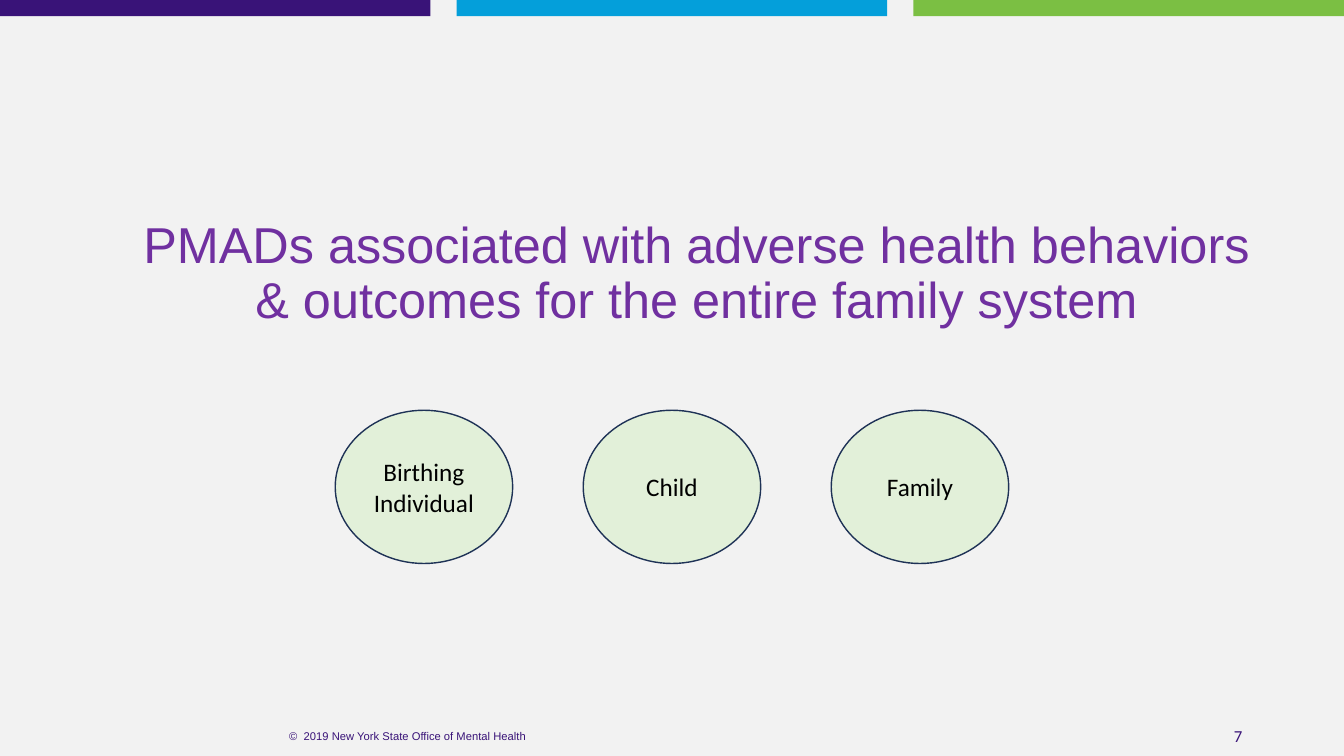
from dataclasses import dataclass

from pptx import Presentation
from pptx import util as u
from pptx.dml.color import RGBColor
from pptx.enum import shapes, text


@dataclass(frozen=True)
class Theme:
    page: str = "F2F2F2"
    bars: tuple = ("391378", "049FDA", "7BBF43")
    footer: str = "391378"
    title: str = "7030A0"
    circle: str = "E2F0D9"
    outline: str = "1E3256"
    label: str = "000000"
    heading_font: str = "Arial"
    label_font: str = "Calibri"
    title_size: int = 36
    label_size: int = 18
    number_size: int = 12
    copyright_size: int = 8


THEME = Theme()
WIDTH, HEIGHT = 13.33, 7.5
BAR_GAP = 0.26
BAR_WIDTH = (WIDTH - 2 * BAR_GAP) / 3
CIRCLE_WIDTH, CIRCLE_PITCH = 1.76, 2.46
CIRCLES_LEFT = (WIDTH - CIRCLE_WIDTH - 2 * CIRCLE_PITCH) / 2
CENTER, RIGHT = text.PP_ALIGN.CENTER, text.PP_ALIGN.RIGHT


def box(left, top, width, height):
    return [u.Inches(v) for v in (left, top, width, height)]


def write(sp, words, size, font, color, align=CENTER):
    tf = sp.text_frame
    tf.word_wrap = True
    tf.auto_size = text.MSO_AUTO_SIZE.NONE
    tf.vertical_anchor = text.MSO_ANCHOR.MIDDLE
    p = tf.paragraphs[0]
    p.text = words
    p.alignment = align
    p.font.size = u.Pt(size)
    p.font.name = font
    p.font.bold = False
    p.font.color.rgb = RGBColor.from_string(color)
    return p


def add_filled(s, kind, place, fill, outline=None):
    sp = s.shapes.add_shape(kind, *place)
    sp.shadow.inherit = False
    sp.fill.solid()
    sp.fill.fore_color.rgb = RGBColor.from_string(fill)
    if outline:
        sp.line.color.rgb = RGBColor.from_string(outline)
        sp.line.width = u.Pt(1)
    else:
        sp.line.fill.background()
    return sp


def add_bars(s):
    for i, color in enumerate(THEME.bars):
        place = box(i * (BAR_WIDTH + BAR_GAP), 0, BAR_WIDTH, 0.16)
        add_filled(s, shapes.MSO_SHAPE.RECTANGLE, place, color)


def add_title(s, words):
    sp = s.shapes.title
    sp.left, sp.top, sp.width, sp.height = box(1.29, 2.56, 11.24, 0.87)
    p = write(sp, words, THEME.title_size, THEME.heading_font, THEME.title)
    p.line_spacing = 0.9
    # The deep bottom inset lifts the two lines clear of the circles
    sp.text_frame.margin_bottom = u.Inches(0.59)


def add_circles(s, labels):
    for i, label in enumerate(labels):
        place = box(CIRCLES_LEFT + i * CIRCLE_PITCH, 4.07, CIRCLE_WIDTH, 1.52)
        sp = add_filled(s, shapes.MSO_SHAPE.OVAL, place, THEME.circle, THEME.outline)
        write(sp, label, THEME.label_size, THEME.label_font, THEME.label)


def add_footer(s, left, width, words, size, font, align):
    sp = s.shapes.add_textbox(*box(left, 7.1, width, 0.4))
    write(sp, words, size, font, THEME.footer, align)


def main():
    prs = Presentation()
    prs.slide_width, prs.slide_height = u.Inches(WIDTH), u.Inches(HEIGHT)
    s = prs.slides.add_slide(prs.slide_layouts[5])

    # Page colour and top band
    s.background.fill.solid()
    s.background.fill.fore_color.rgb = RGBColor.from_string(THEME.page)
    add_bars(s)

    # Message and the three groups affected
    add_title(s, "PMADs associated with adverse health behaviors "
                 "& outcomes for the entire family system")
    add_circles(s, ("Birthing Individual", "Child", "Family"))

    # Footer
    add_footer(s, 1.81, 4.47, "©\u00a0 2019 New York State Office of Mental Health".replace("\u00a0", " "),
               THEME.copyright_size, THEME.heading_font, CENTER)
    add_footer(s, 9.42, 3, "7", THEME.number_size, THEME.label_font, RIGHT)

    prs.save("out.pptx")


if __name__ == "__main__":
    main()
